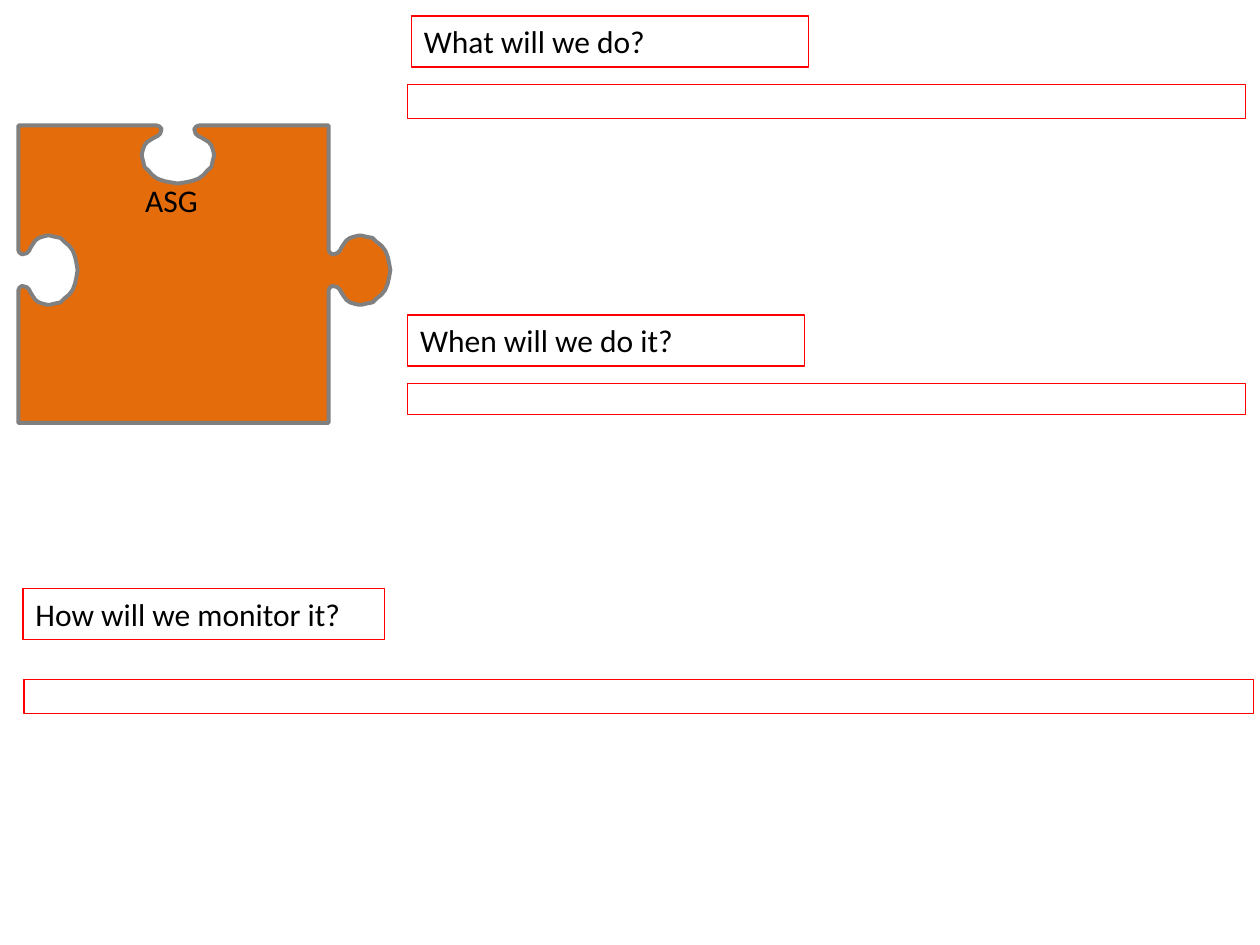
"""Build a planning slide with a puzzle piece and three question sections."""
from dataclasses import dataclass
from typing import Optional

from pptx import Presentation
from pptx import util as u
from pptx.dml.color import RGBColor
from pptx.enum import text

RED = RGBColor(0xFF, 0x00, 0x00)
ORANGE = RGBColor(0xE4, 0x6C, 0x0A)
GRAY = RGBColor(0x80, 0x80, 0x80)
BLACK = RGBColor(0x00, 0x00, 0x00)

HALF_TAB = [
    (11.5, 0), (10, 0.7), (9, 2.2), (9.7, 5), (11.2, 6.5), (12.6, 7.2), (14.8, 8.6),
    (16.9, 10.1), (18.4, 12.2), (19.1, 14.4), (19.8, 17.3), (19.8, 18.7), (19.1, 21.6),
    (18.4, 25.2), (16.2, 27.4), (14, 30.2), (11.2, 32.4), (7.6, 33.8), (4, 34.6),
]
TAB = [(-along, depth) for along, depth in HALF_TAB] + [(0, 35.3)] + HALF_TAB[::-1]


@dataclass(frozen=True)
class Box:
    left: float
    top: float
    width: float
    height: float
    label: Optional[str] = None


@dataclass(frozen=True)
class Piece:
    left: float
    top: float
    right: float
    bottom: float
    notch_x: float
    tab_y: float
    label: str


BOXES = [
    Box(235.2, 9.2, 226.8, 29.1, "What will we do?"),
    Box(233, 48.2, 478.8, 19.4),
    Box(233, 180, 226.8, 29.1, "When will we do it?"),
    Box(232.8, 219, 478.8, 18),
    Box(13.2, 336.2, 206.6, 29.1, "How will we monitor it?"),
    Box(13.7, 388.2, 702.7, 19.4),
]
PIECE = Piece(10.5, 71.7, 187.8, 241.7, 101.7, 154.4, "ASG")


def write_label(shape, label: str) -> None:
    """Write one left-aligned line of black text."""
    paragraph = shape.text_frame.paragraphs[0]
    paragraph.text = label
    paragraph.alignment = text.PP_ALIGN.LEFT
    paragraph.font.name = "Calibri"
    paragraph.font.size = u.Pt(18)
    paragraph.font.color.rgb = BLACK


def draw_box(slide, box: Box) -> None:
    """Draw a red outlined box with its optional question."""
    shape = slide.shapes.add_textbox(
        u.Pt(box.left), u.Pt(box.top), u.Pt(box.width), u.Pt(box.height))
    shape.line.color.rgb = RED
    shape.line.width = u.Pt(0.75)
    shape.text_frame.word_wrap = True
    if box.label:
        write_label(shape, box.label)
        shape.text_frame.auto_size = text.MSO_AUTO_SIZE.SHAPE_TO_FIT_TEXT


def piece_outline(piece: Piece) -> list[tuple[float, float]]:
    """Return the outline clockwise from the top left corner."""
    top = [(piece.notch_x + 1.04 * along, piece.top + 0.94 * depth) for along, depth in TAB]
    right = [(piece.right + depth, piece.tab_y + along) for along, depth in TAB]
    left = [(piece.left + 0.96 * depth, piece.tab_y - along) for along, depth in TAB]
    return [(piece.left, piece.top), *top, (piece.right, piece.top), *right,
            (piece.right, piece.bottom), (piece.left, piece.bottom), *left]


def draw_piece(slide, piece: Piece) -> None:
    """Draw the labelled puzzle piece."""
    start, *others = [(u.Pt(x), u.Pt(y)) for x, y in piece_outline(piece)]
    builder = slide.shapes.build_freeform(*start)
    builder.add_line_segments(others, close=True)
    shape = builder.convert_to_shape()
    shape.shadow.inherit = False
    shape.fill.solid()
    shape.fill.fore_color.rgb = ORANGE
    shape.line.color.rgb = GRAY
    shape.line.width = u.Pt(2.25)
    frame = shape.text_frame
    frame.word_wrap = True
    frame.vertical_anchor = text.MSO_ANCHOR.TOP
    frame.margin_left, frame.margin_top = u.Pt(72.5), u.Pt(32)
    write_label(shape, piece.label)


def main() -> None:
    """Build and save the presentation."""
    presentation = Presentation()
    presentation.slide_width, presentation.slide_height = u.Pt(720), u.Pt(540)
    slide = presentation.slides.add_slide(presentation.slide_layouts[6])
    for box in BOXES:
        draw_box(slide, box)
    draw_piece(slide, PIECE)
    presentation.save("out.pptx")


if __name__ == "__main__":
    main()
